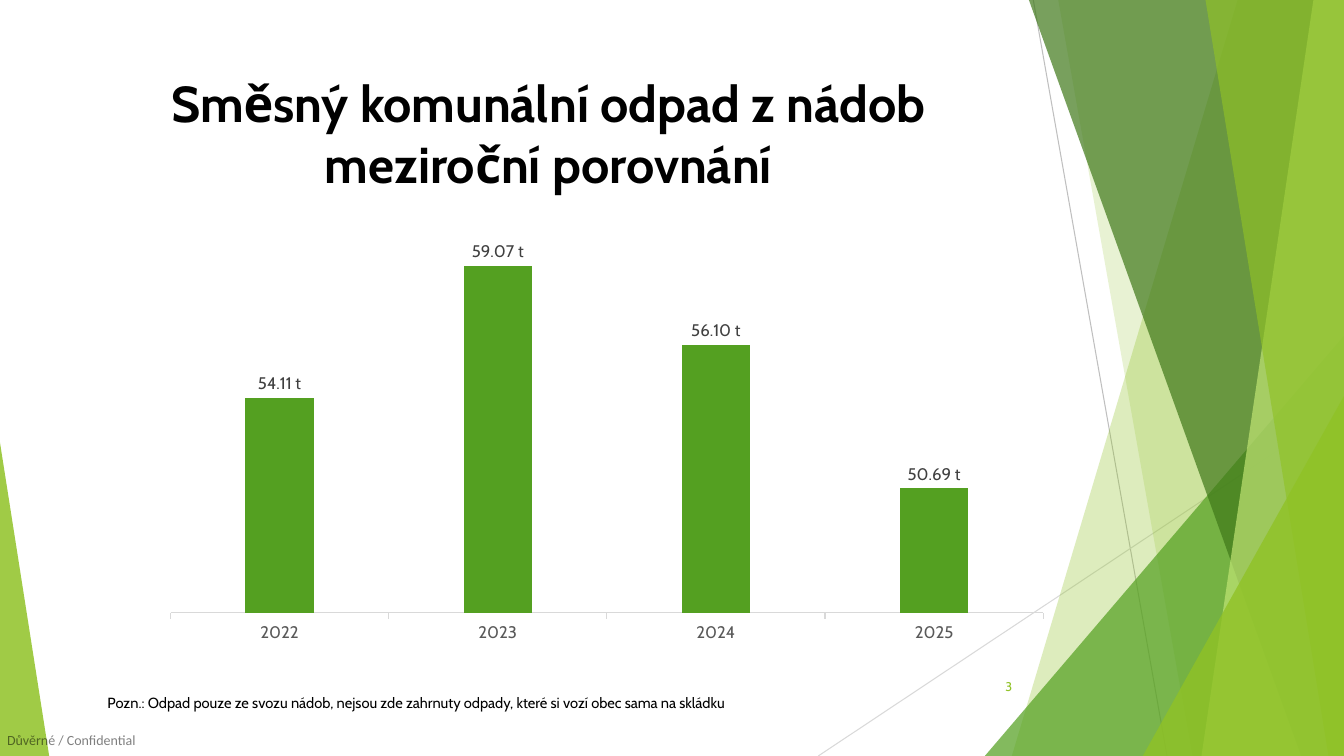
from lxml import etree
from pptx import Presentation
from pptx.chart.data import CategoryChartData
from pptx.dml.color import RGBColor
from pptx.enum.chart import XL_CHART_TYPE, XL_LABEL_POSITION, XL_TICK_MARK
from pptx.enum.shapes import MSO_CONNECTOR, MSO_SHAPE
from pptx.enum.text import MSO_ANCHOR, PP_ALIGN
from pptx.oxml import parse_xml
from pptx.oxml.ns import nsdecls, qn
from pptx.util import Cm, Pt

COLUMNS = XL_CHART_TYPE.COLUMN_CLUSTERED
OUTSIDE_END = XL_LABEL_POSITION.OUTSIDE_END
TICK_OUT = XL_TICK_MARK.OUTSIDE
STRAIGHT = MSO_CONNECTOR.STRAIGHT
TRIANGLE = MSO_SHAPE.ISOSCELES_TRIANGLE
TOP, MIDDLE = MSO_ANCHOR.TOP, MSO_ANCHOR.MIDDLE
LEFT, CENTER, RIGHT = PP_ALIGN.LEFT, PP_ALIGN.CENTER, PP_ALIGN.RIGHT

COLORS = {
    "lime": "90C226", "green": "54A021", "forest": "3F7819", "pale": "C0E474",
    "black": "000000", "label": "404040", "axis": "595959",
    "rule": "BFBFBF", "light_rule": "D9D9D9",
}
WIDTH, HEIGHT = 33.87, 19.05
FONT = "Cabin"
UNIT_FORMAT = '0.00" t"'
WASTE = {"2022": 54.11, "2023": 59.07, "2024": 56.10, "2025": 50.69}
PLOT_AREA = {"x": 0.077, "y": 0.036, "w": 0.921, "h": 0.87}


def color(name):
    return RGBColor.from_string(COLORS[name])


def set_alpha(fill_parent, percent):
    tint = next(fill_parent.iter(qn("a:srgbClr")))
    etree.SubElement(tint, qn("a:alpha")).set("val", str(percent * 1000))


def style_font(font, size, tone, name=FONT):
    font.name = name
    font.size = Pt(size)
    font.color.rgb = color(tone)


def paint(shape, tone, alpha):
    shape.shadow.inherit = False
    shape.fill.solid()
    shape.fill.fore_color.rgb = color(tone)
    shape.line.fill.background()
    set_alpha(shape._element.spPr, alpha)


def add_rule(page, start, end, tone):
    rule = page.shapes.add_connector(STRAIGHT, *map(Cm, start + end))
    rule.line.color.rgb = color(tone)
    rule.line.width = Pt(0.75)
    etree.SubElement(rule._element.spPr, qn("a:effectLst"))


def add_band(page, box, top_x, bottom_x, tone, alpha):
    left, top, width, height = box
    right, bottom = left + width, top + height
    builder = page.shapes.build_freeform(Cm(left + top_x), Cm(top))
    corners = [(right, top), (right, bottom), (left + bottom_x, bottom)]
    builder.add_line_segments([(Cm(x), Cm(y)) for x, y in corners], close=True)
    paint(builder.convert_to_shape(), tone, alpha)


def add_wedge(page, box, apex, tone, alpha):
    wedge = page.shapes.add_shape(TRIANGLE, *map(Cm, box))
    wedge.adjustments[0] = apex
    paint(wedge, tone, alpha)


def add_corner_wedge(page, box, width, height, tone, alpha):
    left = box[0] + box[2] - width
    top = box[1] + box[3] - height
    add_wedge(page, (left, top, width, height), 1, tone, alpha)


def add_backdrop(page, box):
    left, top, width, height = box
    right, bottom = left + width, top + height
    add_rule(page, (left + 26.04, top), (left + 29.41, bottom), "rule")
    add_rule(page, (right, top + 10.24), (left + 20.62, bottom), "light_rule")
    add_band(page, box, 31.19, 25.5, "lime", 30)
    add_band(page, box, 26.67, 30.05, "lime", 20)
    add_corner_wedge(page, box, 9.05, 10.59, "green", 72)
    add_band(page, box, 25.93, 32.79, "forest", 70)
    add_band(page, box, 33.1, 30.28, "pale", 70)
    add_band(page, box, 30.38, 33.48, "lime", 65)
    add_corner_wedge(page, box, 5.07, 9.07, "lime", 80)
    add_wedge(page, (left, bottom - 7.9, 1.24, 7.9), 0, "lime", 85)


def add_text(page, box, text, size, tone, align=LEFT, anchor=TOP, wrap=True,
             font=FONT, bold=False):
    frame = page.shapes.add_textbox(*map(Cm, box)).text_frame
    frame.word_wrap = wrap
    frame.vertical_anchor = anchor
    para = frame.paragraphs[0]
    para.text = text
    para.alignment = align
    for span in para.runs:
        style_font(span.font, size, tone, font)
        span.font.bold = bold
    return frame


def add_confidential_mark(page, box):
    frame = add_text(page, box, "Důvěrné / Confidential", 10, "black",
                     wrap=False, font="Calibri")
    frame.margin_left = frame.margin_right = 0
    frame.margin_top = frame.margin_bottom = 0
    set_alpha(frame.paragraphs[0].runs[0]._r, 50)


def add_waste_chart(page, box):
    data = CategoryChartData(number_format=UNIT_FORMAT)
    data.categories = list(WASTE)
    data.add_series("Series 1", list(WASTE.values()))
    chart = page.shapes.add_chart(COLUMNS, *map(Cm, box), data).chart
    chart.has_title = False
    chart.has_legend = False
    style_font(chart.font, 10, "black")

    years = chart.category_axis
    years.major_tick_mark = TICK_OUT
    years.format.line.color.rgb = color("light_rule")
    years.format.line.width = Pt(0.75)
    style_font(years.tick_labels.font, 12, "axis")

    tonnes = chart.value_axis
    tonnes.minimum_scale, tonnes.maximum_scale = 46, 60
    tonnes.has_major_gridlines = False
    tonnes.visible = False

    plot = chart.plots[0]
    plot.gap_width, plot.overlap = 219, -27
    plot.vary_by_categories = False
    bars = plot.series[0]
    bars.format.fill.solid()
    bars.format.fill.fore_color.rgb = color("green")
    labels = bars.data_labels
    labels.show_value = True
    labels.position = OUTSIDE_END
    labels.number_format = UNIT_FORMAT
    labels.number_format_is_linked = False
    style_font(labels.font, 12, "label")
    fix_plot_area(chart)


def fix_plot_area(chart):
    area = chart._chartSpace.find(qn("c:chart")).find(qn("c:plotArea"))
    for layout in area.findall(qn("c:layout")):
        area.remove(layout)
    modes = "".join(f'<c:{side}Mode val="edge"/>' for side in "xy")
    sizes = "".join(f'<c:{side} val="{value}"/>' for side, value in PLOT_AREA.items())
    area.insert(0, parse_xml(
        f'<c:layout {nsdecls("c")}><c:manualLayout><c:layoutTarget val="inner"/>'
        f"{modes}{sizes}</c:manualLayout></c:layout>"))


def main():
    deck = Presentation()
    deck.slide_width, deck.slide_height = Cm(WIDTH), Cm(HEIGHT)
    page = deck.slides.add_slide(deck.slide_layouts[6])
    add_backdrop(page, (0, 0, WIDTH, HEIGHT))
    add_confidential_mark(page, (0.18, 18.44, 3.33, 0.43))
    add_text(page, (1.88, 1.7, 23.88, 3.66),
             "Směsný komunální odpad z nádob\vmeziroční porovnání",
             36, "black", align=CENTER, bold=True)
    add_text(page, (23.85, 16.79, 1.91, 1.02), "3", 9, "lime",
             align=RIGHT, anchor=MIDDLE)
    add_waste_chart(page, (2.46, 5.69, 23.88, 10.77))
    add_text(page, (2.46, 17.35, 17.4, 0.71),
             "Pozn.: Odpad pouze ze svozu nádob, nejsou zde zahrnuty odpady, "
             "které si vozí obec sama na skládku", 10.5, "black", wrap=False)
    deck.save("out.pptx")


if __name__ == "__main__":
    main()
